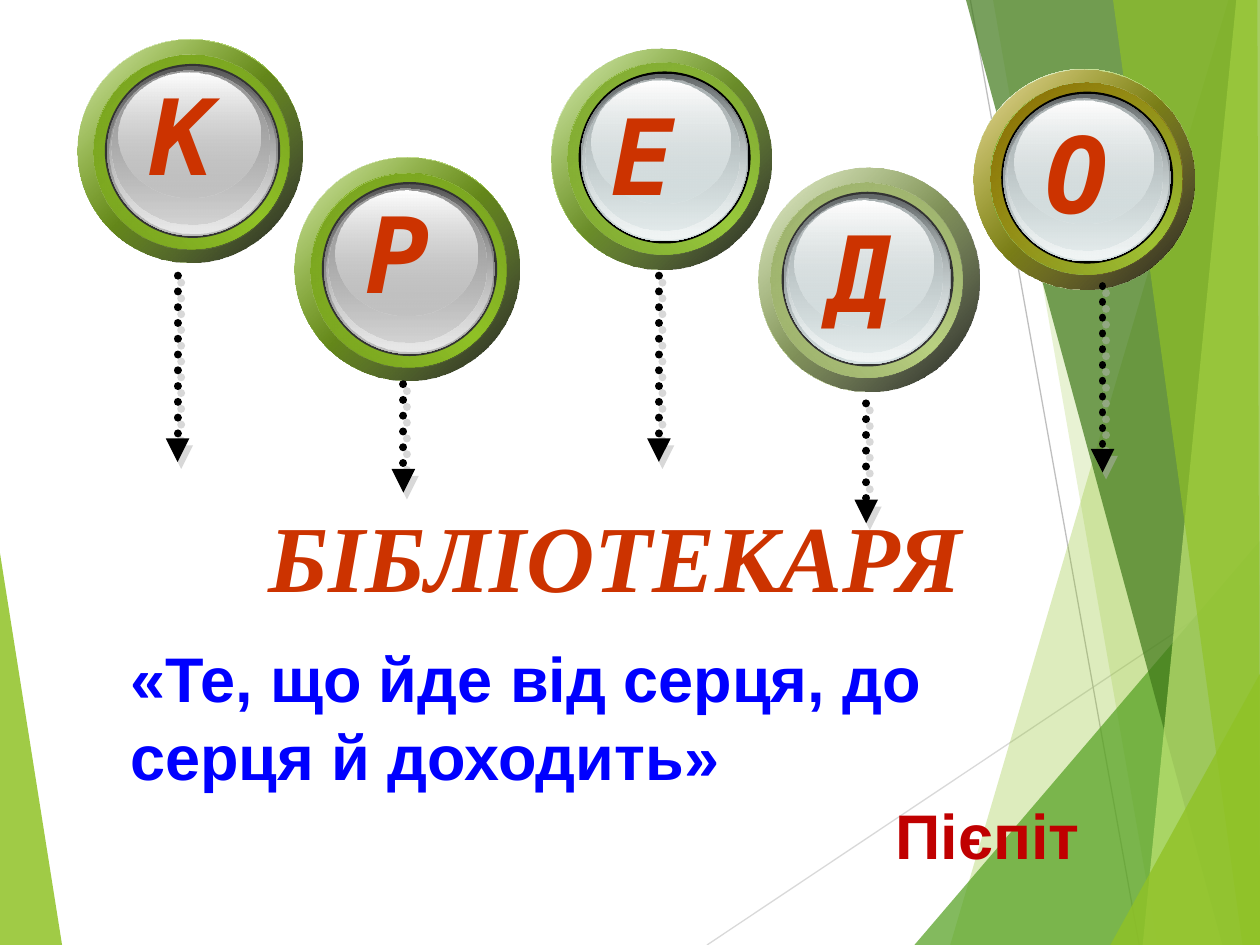
from typing import NamedTuple

from lxml import etree
from pptx import Presentation
from pptx.dml.color import RGBColor
from pptx.enum.dml import MSO_LINE
from pptx.enum.shapes import MSO_CONNECTOR, MSO_SHAPE
from pptx.enum.text import MSO_ANCHOR, MSO_AUTO_SIZE, PP_ALIGN
from pptx.oxml.ns import qn
from pptx.util import Pt

OVAL = MSO_SHAPE.OVAL
STRAIGHT = MSO_CONNECTOR.STRAIGHT
DOTTED = MSO_LINE.ROUND_DOT
TOP = MSO_ANCHOR.TOP
GROW = MSO_AUTO_SIZE.SHAPE_TO_FIT_TEXT
LEFT, CENTER, RIGHT = PP_ALIGN.LEFT, PP_ALIGN.CENTER, PP_ALIGN.RIGHT

WIDTH, HEIGHT = 720, 540
WHITE = RGBColor(0xFF, 0xFF, 0xFF)
BLACK = RGBColor(0x00, 0x00, 0x00)
CHARCOAL = RGBColor(0x33, 0x33, 0x33)
SHADOW = RGBColor(0xB2, 0xB2, 0xB2)
PALE_LINE = RGBColor(0xD9, 0xD9, 0xD9)
GREY_LINE = RGBColor(0xBF, 0xBF, 0xBF)
ORANGE_RED = RGBColor(0xCC, 0x33, 0x00)
BLUE = RGBColor(0x00, 0x00, 0xFF)
DARK_RED = RGBColor(0xC0, 0x00, 0x00)
LIME = RGBColor(0x90, 0xC2, 0x26)
GRASS = RGBColor(0x54, 0xA0, 0x21)
FOREST = RGBColor(0x3F, 0x78, 0x19)
PALE_LIME = RGBColor(0xC0, 0xE4, 0x74)
LEAF = RGBColor(0x99, 0xCA, 0x3C)
LEAF_RIM = RGBColor(0x75, 0x9B, 0x2E)
SAGE = RGBColor(0xB9, 0xD1, 0x81)
GOLD = RGBColor(0xCC, 0x99, 0x00)


class Ring(NamedTuple):
    edge: RGBColor
    tint: RGBColor
    rim: RGBColor
    sheen: RGBColor


class Glass(NamedTuple):
    dark: RGBColor
    base: RGBColor
    light: RGBColor
    middle: RGBColor


GREEN_RING = Ring(LIME, LIME, RGBColor(0x6E, 0x95, 0x1D), RGBColor(0x76, 0x9F, 0x1F))
LEAF_RING = Ring(LEAF, LEAF, LEAF_RIM, RGBColor(0x7E, 0xA6, 0x31))
SAGE_RING = Ring(SAGE, SAGE, RGBColor(0x8E, 0xA0, 0x63), RGBColor(0x98, 0xAC, 0x6A))
GOLD_RING = Ring(LEAF, GOLD, LEAF_RIM, RGBColor(0x82, 0x61, 0x00))
SILVER = Glass(RGBColor(0x59, 0x59, 0x59), RGBColor(0xC0, 0xC0, 0xC0),
               RGBColor(0xE9, 0xE9, 0xE9), RGBColor(0x98, 0x98, 0x98))
ICE = Glass(RGBColor(0x63, 0x68, 0x69), RGBColor(0xD6, 0xE1, 0xE2),
            RGBColor(0xF1, 0xF5, 0xF5), RGBColor(0xAA, 0xB2, 0xB3))

BACKDROP_LINES = [((404, 540), (720, 329), PALE_LINE),
                  ((554.5, 0), (651, 540), GREY_LINE)]
BACKDROP_SHARDS = [
    ([(0, 316), (35.5, 540), (0, 540)], LIME, 85),
    ([(702, 0), (543, 540), (720, 540), (720, 0)], LIME, 30),
    ([(567.5, 0), (661.5, 540), (720, 540), (720, 0)], LIME, 20),
    ([(522.5, 540), (720, 309), (720, 540)], GRASS, 72),
    ([(552, 0), (698.5, 540), (720, 540), (720, 0)], FOREST, 70),
    ([(706.5, 0), (653, 540), (720, 540), (720, 0)], PALE_LIME, 70),
    ([(636, 0), (710, 540), (720, 540), (718.5, 0)], LIME, 65),
    ([(634.5, 540), (720, 385), (720, 540)], LIME, 80),
]
BADGES = [
    ("Р", (168.5, 90, 128.5, 127.5), (0, 0), (174, 129.5), GREEN_RING, CHARCOAL, SILVER),
    ("К", (44.5, 22.5, 128.5, 127.5), (0, 0), (50.5, 62), GREEN_RING, CHARCOAL, SILVER),
    ("Е", (315, 28, 126, 126), (0.5, -1), (314.5, 73.5), LEAF_RING, BLACK, ICE),
    ("Д", (433.5, 96, 126, 128), (-2, -0.5), (438.5, 140.5), SAGE_RING, CHARCOAL, ICE),
    ("О", (556.5, 39.5, 126, 126), (0.5, -1), (562.5, 84), GOLD_RING, BLACK, ICE),
]
ARROWS = [(101.5, 157.5, 264), (230.5, 219.5, 281.5), (376.5, 157.5, 264),
          (495, 230.5, 299), (630, 163.5, 270)]


def add_alpha(color_element, opacity):
    etree.SubElement(color_element, qn("a:alpha"), val=str(opacity * 1000))


def fill_gradient(shape, stops, clockwise_angle):
    shape.fill.gradient()
    shape.fill.gradient_angle = (360 - clockwise_angle) % 360
    stop_list = next(shape.element.iter(qn("a:gsLst")))
    for stop in list(stop_list):
        stop_list.remove(stop)
    for position, color, opacity in stops:
        stop = etree.SubElement(stop_list, qn("a:gs"), pos=str(position * 1000))
        add_alpha(etree.SubElement(stop, qn("a:srgbClr"), val=str(color)), opacity)


def add_line(shapes, start, end, color, width):
    line = shapes.add_connector(STRAIGHT, *map(Pt, start + end))
    line.line.color.rgb = color
    line.line.width = Pt(width)
    effects = etree.SubElement(line.element.spPr, qn("a:effectLst"))
    return line, effects


def add_shard(shapes, points, color, opacity):
    corners = [(Pt(x), Pt(y)) for x, y in points]
    builder = shapes.build_freeform(*corners[0], scale=1.0)
    builder.add_line_segments(corners[1:], close=True)
    shard = builder.convert_to_shape()
    shard.shadow.inherit = False
    shard.fill.solid()
    shard.fill.fore_color.rgb = color
    add_alpha(next(shard.element.spPr.iter(qn("a:srgbClr"))), opacity)
    shard.line.fill.background()


def add_backdrop(slide):
    shapes = slide.shapes.add_group_shape().shapes
    add_shard(shapes, *BACKDROP_SHARDS[0])
    for start, end, color in BACKDROP_LINES:
        add_line(shapes, start, end, color, 0.75)
    for shard in BACKDROP_SHARDS[1:]:
        add_shard(shapes, *shard)


def write(paragraph, text, font_name, size, color, italic=False):
    run = paragraph.add_run()
    run.text = text
    run.font.name = font_name
    run.font.size = Pt(size)
    run.font.bold = True
    run.font.italic = italic
    run.font.color.rgb = color


def place_text_shape(shape, box):
    shape.left, shape.top, shape.width, shape.height = map(Pt, box)
    frame = shape.text_frame
    frame.word_wrap = True
    frame.auto_size = GROW
    frame.vertical_anchor = TOP
    return frame


def write_display(shape, box, text, font_name, size):
    paragraph = place_text_shape(shape, box).paragraphs[0]
    paragraph.alignment = CENTER
    paragraph.line_spacing = 0.6
    write(paragraph, text, font_name, size, ORANGE_RED, italic=True)


def add_badge(slide, letter, box, shift, letter_corner, ring, core, glass):
    left, top, width, height = box
    rim = [(0, ring.rim, 100), (50, ring.edge, 100), (100, ring.rim, 100)]
    outer = [(0, WHITE, 100), (50, ring.edge, 100), (100, WHITE, 100)]
    layers = [
        ((0, 0, 1, 1), outer, 45),
        ((0, 0, 1, 1), [(0, ring.tint, 32), (100, BLACK, 90)], 45),
        ((0.07, 0.07, 0.87, 0.87), rim, 315),
        ((0.07, 0.07, 0.87, 0.87), [(0, ring.sheen, 100), (100, ring.tint, 0)], 45),
        ((0.12, 0.11, 0.78, 0.78), None, 0),
        ((0.13, 0.12, 0.76, 0.76), [(0, glass.dark, 100), (100, glass.base, 100)], 90),
        ((0.14, 0.13, 0.74, 0.74), [(0, glass.base, 0), (100, glass.light, 100)], 90),
        ((0.15, 0.14, 0.7, 0.69), [(0, glass.middle, 100), (100, glass.base, 48)], 90),
        ((0.18, 0.15, 0.63, 0.56), [(0, WHITE, 100), (100, glass.base, 38)], 90),
    ]
    shapes = slide.shapes.add_group_shape().shapes
    for (x, y, across, down), stops, angle in layers:
        shift_x, shift_y = shift if x else (0, 0)
        disc = shapes.add_shape(OVAL, Pt(left + x * width + shift_x),
                                Pt(top + y * height + shift_y),
                                Pt(across * width), Pt(down * height))
        disc.shadow.inherit = False
        disc.line.fill.background()
        if stops:
            fill_gradient(disc, stops, angle)
        else:
            disc.fill.solid()
            disc.fill.fore_color.rgb = core
    label_box = (*letter_corner, 106.5, 50.5)
    label = slide.shapes.add_textbox(*map(Pt, label_box))
    write_display(label, label_box, letter, "DejaVu Sans Mono", 60)


def add_quote(slide, box):
    frame = place_text_shape(slide.shapes.add_textbox(*map(Pt, box)), box)
    lines = [("«Те, що йде від серця, до серця й доходить»", BLUE, LEFT),
             ("Пієпіт", DARK_RED, RIGHT)]
    for index, (text, color, alignment) in enumerate(lines):
        paragraph = frame.add_paragraph() if index else frame.paragraphs[0]
        paragraph.alignment = alignment
        paragraph.line_spacing = 1.04
        write(paragraph, text, "Arial", 36, color)


def add_arrow(slide, x, top, bottom):
    arrow, effects = add_line(slide.shapes, (x, top), (x, bottom), BLACK, 4.5)
    arrow.line.dash_style = DOTTED
    outline = arrow.element.spPr.find(qn("a:ln"))
    outline.set("cap", "rnd")
    etree.SubElement(outline, qn("a:tailEnd"), type="triangle")
    shadow = etree.SubElement(effects, qn("a:outerShdw"), blurRad="0",
                              dist=str(Pt(4.5)), dir=str(63 * 60000))
    add_alpha(etree.SubElement(shadow, qn("a:srgbClr"), val=str(SHADOW)), 50)


def main():
    presentation = Presentation()
    presentation.slide_width, presentation.slide_height = Pt(WIDTH), Pt(HEIGHT)
    slide = presentation.slides.add_slide(presentation.slide_layouts[5])
    write_display(slide.shapes.title, (140.5, 304, 422, 49.5),
                  "БІБЛІОТЕКАРЯ", "Times New Roman", 54)
    add_backdrop(slide)
    for badge in BADGES:
        add_badge(slide, *badge)
    add_quote(slide, (67.5, 360, 556.5, 138))
    for arrow in ARROWS:
        add_arrow(slide, *arrow)
    presentation.save("out.pptx")


if __name__ == "__main__":
    main()
